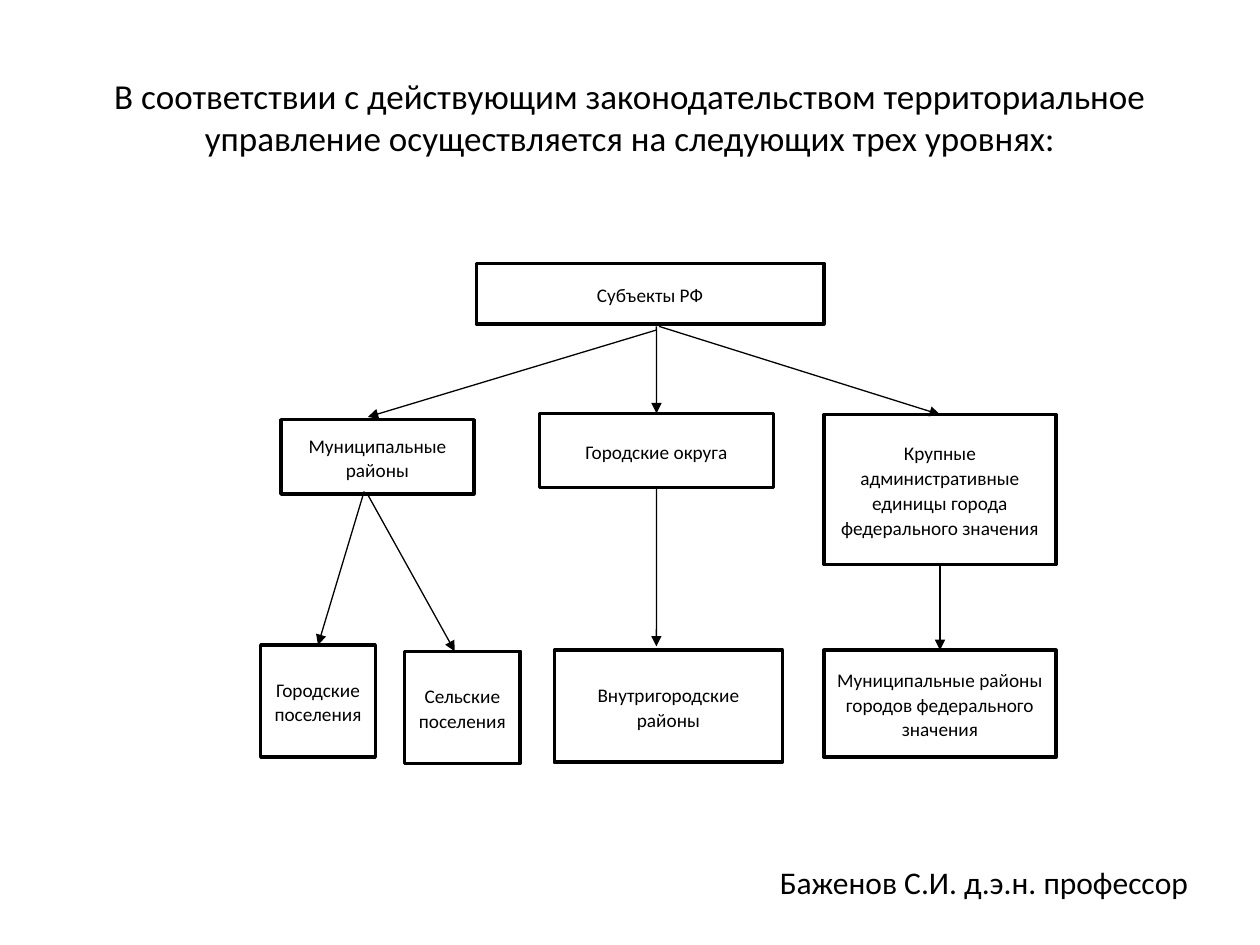
from dataclasses import dataclass

from lxml import etree
from pptx import Presentation
from pptx.dml.color import RGBColor
from pptx.enum.shapes import MSO_CONNECTOR, MSO_SHAPE
from pptx.enum.text import MSO_ANCHOR, PP_ALIGN
from pptx.oxml.ns import qn
from pptx.util import Pt

STRAIGHT = MSO_CONNECTOR.STRAIGHT
RECTANGLE = MSO_SHAPE.RECTANGLE
MIDDLE, TOP_ANCHOR = MSO_ANCHOR.MIDDLE, MSO_ANCHOR.TOP
CENTER, LEFT = PP_ALIGN.CENTER, PP_ALIGN.LEFT
TOP_SIDE, BOTTOM_SIDE = 0, 2
BLANK_LAYOUT = 6


@dataclass(frozen=True)
class Theme:
    font: str = "Calibri"
    ink: RGBColor = RGBColor(0, 0, 0)
    paper: RGBColor = RGBColor(255, 255, 255)
    title_size: float = 20
    author_size: float = 18
    unit_size: float = 11
    border: float = 2
    arrow: float = 0.75


THEME = Theme()

# Administrative units: key, left, top, width, height, name
UNITS = [
    ("subjects", 272.2, 150.5, 198.7, 34.6, "Субъекты РФ"),
    ("districts", 160.6, 239.8, 110.2, 42.5, "Муниципальные районы"),
    ("okrugs", 308.2, 236.2, 133.9, 42.5, "Городские округа"),
    ("large units", 470.9, 236.9, 132.5, 85.7,
     "Крупные административные единицы города федерального значения"),
    ("urban", 149, 368.6, 65.5, 64.1, "Городские поселения"),
    ("rural", 231.1, 372.2, 66.2, 64.1, "Сельские поселения"),
    ("inner city", 316.8, 371.5, 130.3, 64.1, "Внутригородские районы"),
    ("federal city", 470.9, 371.5, 132.5, 61.2,
     "Муниципальные районы городов федерального значения"),
]

# Subordination: start point, end point, unit joined at start, unit joined at end
ARROWS = [
    ((375.1, 188.6), (210.2, 238.3), None, None),
    ((375.1, 186.5), (375.1, 236.2), None, "okrugs"),
    ((376.6, 186.5), (537.1, 236.9), None, "large units"),
    ((208.1, 280.8), (181.7, 368.6), None, "urban"),
    ((209.5, 281.5), (259.9, 372.2), None, None),
    ((375.1, 278.7), (375.1, 369.4), "okrugs", None),
    ((537.1, 322.6), (537.1, 371.5), "large units", "federal city"),
]


def write(frame, text, size, align, anchor):
    frame.word_wrap = True
    frame.vertical_anchor = anchor
    paragraph = frame.paragraphs[0]
    paragraph.alignment = align
    run = paragraph.add_run()
    run.text = text
    run.font.name = THEME.font
    run.font.size = Pt(size)
    run.font.color.rgb = THEME.ink
    return paragraph


def add_caption(slide, box, text, size, align, anchor):
    caption = slide.shapes.add_textbox(*map(Pt, box))
    write(caption.text_frame, text, size, align, anchor)


def add_unit(slide, box, name):
    unit = slide.shapes.add_shape(RECTANGLE, *map(Pt, box))
    unit.shadow.inherit = False
    unit.fill.solid()
    unit.fill.fore_color.rgb = THEME.paper
    unit.line.color.rgb = THEME.ink
    unit.line.width = Pt(THEME.border)
    paragraph = write(unit.text_frame, name, THEME.unit_size, CENTER, MIDDLE)
    paragraph.line_spacing = 1.07
    paragraph.space_after = Pt(8)
    return unit


def add_arrow(slide, start, end, upper, lower):
    arrow = slide.shapes.add_connector(STRAIGHT, *map(Pt, start + end))
    if upper is not None:
        arrow.begin_connect(upper, BOTTOM_SIDE)
    if lower is not None:
        arrow.end_connect(lower, TOP_SIDE)
    arrow.line.color.rgb = THEME.ink
    arrow.line.width = Pt(THEME.arrow)
    properties = arrow.line._get_or_add_ln()
    etree.SubElement(properties, qn("a:tailEnd"), type="triangle")
    etree.SubElement(arrow._element.spPr, qn("a:effectLst"))


def main():
    deck = Presentation()
    deck.slide_width, deck.slide_height = Pt(720), Pt(540)
    slide = deck.slides.add_slide(deck.slide_layouts[BLANK_LAYOUT])

    # Heading
    add_caption(slide, (36, 21.6, 648, 90),
                "В соответствии с действующим законодательством территориальное "
                "управление осуществляется на следующих трех уровнях:",
                THEME.title_size, CENTER, MIDDLE)

    # Hierarchy of units
    units = {key: add_unit(slide, box, name) for key, *box, name in UNITS}
    for start, end, upper, lower in ARROWS:
        add_arrow(slide, start, end, units.get(upper), units.get(lower))

    # Author
    add_caption(slide, (438.5, 489.6, 281.5, 28.8), "Баженов С.И. д.э.н. профессор",
                THEME.author_size, LEFT, TOP_ANCHOR)

    deck.save("out.pptx")


if __name__ == "__main__":
    main()
